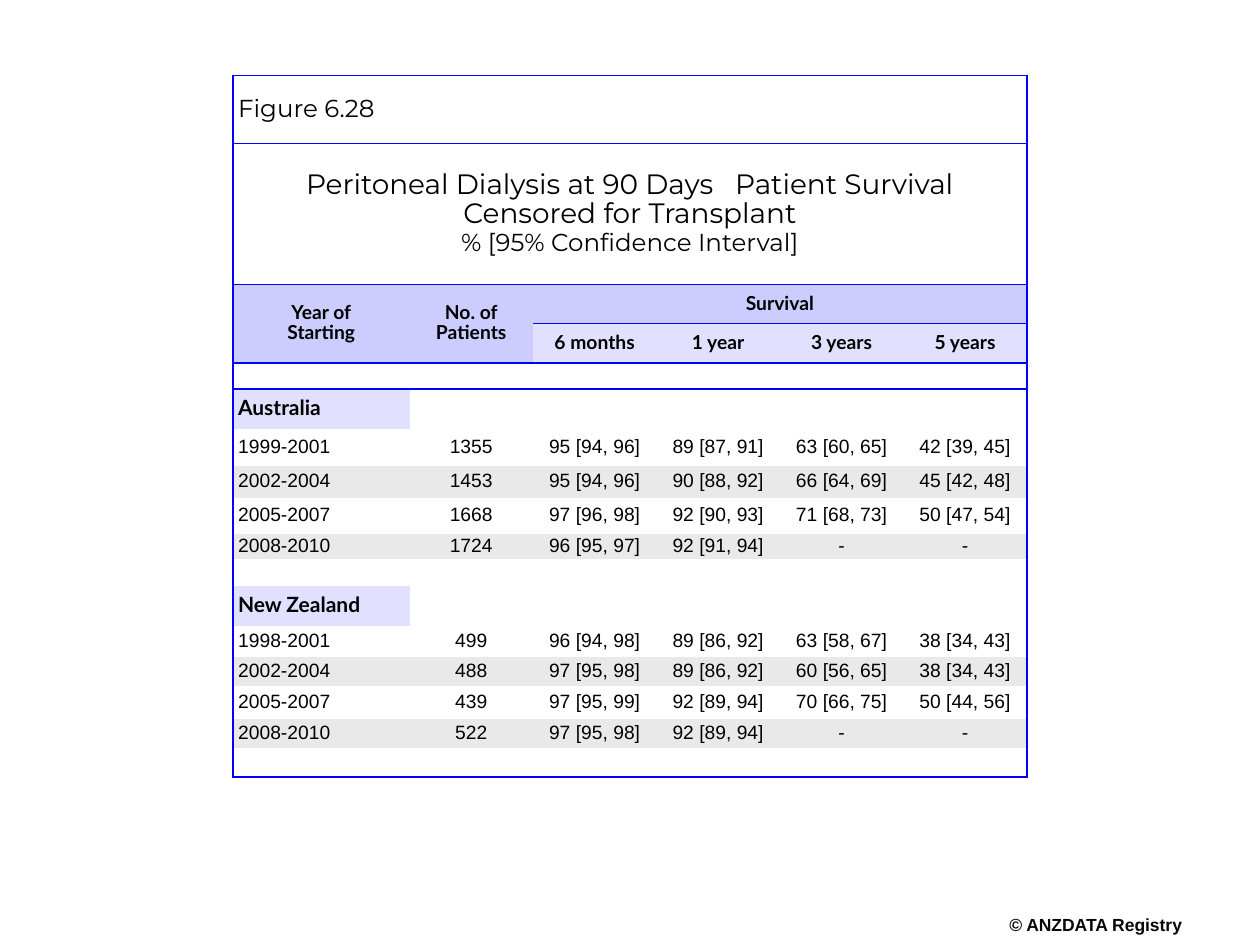
from dataclasses import dataclass

from lxml import etree
from pptx import Presentation
from pptx import util as u
from pptx.dml.color import RGBColor
from pptx.enum import text
from pptx.oxml import ns


@dataclass(frozen=True)
class Theme:
    ink: str = "000000"
    credit: str = "080808"
    rule: str = "0000FF"
    head: str = "CCCCFF"
    subhead: str = "E1E1FF"
    band: str = "E9E9E9"
    title_font: str = "Montserrat"
    head_font: str = "Lato"
    body_font: str = "Arial"
    title_size: int = 16
    subtitle_size: int = 14
    region_size: int = 12
    body_size: int = 11
    credit_size: int = 10
    blank_size: int = 6
    line_spacing: float = 0.85
    plain_style: str = "{2D5ABB26-0587-4C30-8999-92F81FD0307C}"


LEFT, CENTER = text.PP_ALIGN.LEFT, text.PP_ALIGN.CENTER
GRID_COLS = 1000  # grid units across the slide

# Table grid, in grid units
COLS = [140] + [98] * 5
ROWS = [54, 112, 31, 31, 21, 32, 29, 25, 29, 20, 21, 32, 25, 23, 26, 23, 23]
HEAD_ROWS = 4

REGIONS = [
    (5, "Australia", [
        ("1999-2001", "1355", "95 [94, 96]", "89 [87, 91]", "63 [60, 65]", "42 [39, 45]"),
        ("2002-2004", "1453", "95 [94, 96]", "90 [88, 92]", "66 [64, 69]", "45 [42, 48]"),
        ("2005-2007", "1668", "97 [96, 98]", "92 [90, 93]", "71 [68, 73]", "50 [47, 54]"),
        ("2008-2010", "1724", "96 [95, 97]", "92 [91, 94]", "-", "-"),
    ]),
    (11, "New Zealand", [
        ("1998-2001", "499", "96 [94, 98]", "89 [86, 92]", "63 [58, 67]", "38 [34, 43]"),
        ("2002-2004", "488", "97 [95, 98]", "89 [86, 92]", "60 [56, 65]", "38 [34, 43]"),
        ("2005-2007", "439", "97 [95, 99]", "92 [89, 94]", "70 [66, 75]", "50 [44, 56]"),
        ("2008-2010", "522", "97 [95, 98]", "92 [89, 94]", "-", "-"),
    ]),
]


class Deck:
    def __init__(self, prs, theme):
        self.theme = theme
        self.unit = prs.slide_width / GRID_COLS
        self.s = prs.slides.add_slide(prs.slide_layouts[6])

    def grid(self, *units):
        return [u.Emu(round(n * self.unit)) for n in units]

    def add_text(self, p, words, size, font, bold=False, align=CENTER, color=None):
        p.alignment, p.line_spacing = align, self.theme.line_spacing
        r = p.add_run()
        r.text = words
        r.font.size, r.font.name, r.font.bold = u.Pt(size), font, bold
        r.font.color.rgb = RGBColor.from_string(color or self.theme.ink)

    def label(self, box, words, **style):
        tf = self.s.shapes.add_textbox(*self.grid(*box)).text_frame
        tf.word_wrap = False
        tf.margin_left = tf.margin_right = tf.margin_top = tf.margin_bottom = 0
        self.add_text(tf.paragraphs[0], words, **style)

    def table(self, left, top):
        box = self.grid(left, top, sum(COLS), sum(ROWS))
        tbl = self.s.shapes.add_table(len(ROWS), len(COLS), *box).table
        tbl.first_row = tbl.horz_banding = False
        tbl._tbl.tblPr.find(ns.qn("a:tableStyleId")).text = self.theme.plain_style
        for col, width in zip(tbl.columns, self.grid(*COLS)):
            col.width = width
        for row, height in zip(tbl.rows, self.grid(*ROWS)):
            row.height = height
        for r in range(len(ROWS)):
            for c in range(len(COLS)):
                self.blank(tbl.cell(r, c))
                self.borders(tbl.cell(r, c), r, c)
        return tbl

    def blank(self, cell):
        """Keep an empty cell from stretching its row."""
        cell.margin_top = cell.margin_bottom = 0
        end = etree.SubElement(cell.text_frame.paragraphs[0]._p, ns.qn("a:endParaRPr"))
        end.set("sz", str(self.theme.blank_size * 100))

    def borders(self, cell, r, c):
        """Rule the outer frame and every edge of the heading rows."""
        last_row, last_col = len(ROWS) - 1, len(COLS) - 1
        ruled = {
            "L": c == 0,
            "R": c == last_col or r < 2 or (r == 2 and c >= 2),
            "T": r <= HEAD_ROWS,
            "B": r < HEAD_ROWS or r == last_row,
        }
        tcPr = cell._tc.get_or_add_tcPr()
        for side, on in ruled.items():
            if on:
                ln = etree.SubElement(tcPr, ns.qn(f"a:ln{side}"), w=str(u.Pt(1)))
                fill = etree.SubElement(ln, ns.qn("a:solidFill"))
                etree.SubElement(fill, ns.qn("a:srgbClr"), val=self.theme.rule)

    def fill(self, cell, words=(), fill=None, pad=2, **style):
        """Fill one cell; each item of words is a paragraph."""
        cell.vertical_anchor = text.MSO_ANCHOR.MIDDLE
        cell.margin_left, cell.margin_right = self.grid(4, 4)
        cell.margin_top, cell.margin_bottom = self.grid(pad, pad)
        if fill:
            cell.fill.solid()
            cell.fill.fore_color.rgb = RGBColor.from_string(fill)
        else:
            cell.fill.background()
        tf = cell.text_frame
        for i, line in enumerate(words):
            p = tf.add_paragraph() if i else tf.paragraphs[0]
            self.add_text(p, line, **style)


def main():
    prs = Presentation()
    prs.slide_width, prs.slide_height = u.Inches(10), u.Inches(7.5)
    t = Theme()
    deck = Deck(prs, t)

    # Credit line
    deck.label((799, 728, 141, 17), "© ANZDATA Registry", size=t.credit_size,
               font=t.body_font, bold=True, color=t.credit)

    # Figure number and title
    tbl = deck.table(185, 60)
    for r in (0, 1):
        tbl.cell(r, 0).merge(tbl.cell(r, 5))
    deck.fill(tbl.cell(0, 0), ["Figure 6.28"], pad=4, size=t.subtitle_size,
              font=t.title_font, align=LEFT)
    title = tbl.cell(1, 0)
    deck.fill(title, ["Peritoneal Dialysis at 90 Days   Patient Survival",
                      "Censored for Transplant"],
              pad=4, size=t.title_size, font=t.title_font)
    p = title.text_frame.add_paragraph()
    p.space_before = p.space_after = u.Pt(1)
    deck.add_text(p, "% [95% Confidence Interval]", t.subtitle_size, t.title_font)

    # Column headings
    head = dict(size=t.body_size, font=t.head_font, bold=True)
    for c, words in enumerate((["Year of", "Starting"], ["No. of", "Patients"])):
        tbl.cell(2, c).merge(tbl.cell(3, c))
        deck.fill(tbl.cell(2, c), words, t.head, **head)
    tbl.cell(2, 2).merge(tbl.cell(2, 5))
    deck.fill(tbl.cell(2, 2), ["Survival"], t.head, **head)
    for c, period in enumerate(("6 months", "1 year", "3 years", "5 years"), 2):
        deck.fill(tbl.cell(3, c), [period], t.subhead, **head)

    # Regions with banded rows
    for top, region, cohorts in REGIONS:
        deck.fill(tbl.cell(top, 0), [region], t.subhead, size=t.region_size,
                  font=t.head_font, bold=True, align=LEFT)
        for i, cohort in enumerate(cohorts):
            for c, value in enumerate(cohort):
                deck.fill(tbl.cell(top + 1 + i, c), [value], t.band if i % 2 else None,
                          pad=0, size=t.body_size, font=t.body_font,
                          align=CENTER if c else LEFT)

    prs.save("out.pptx")


if __name__ == "__main__":
    main()
